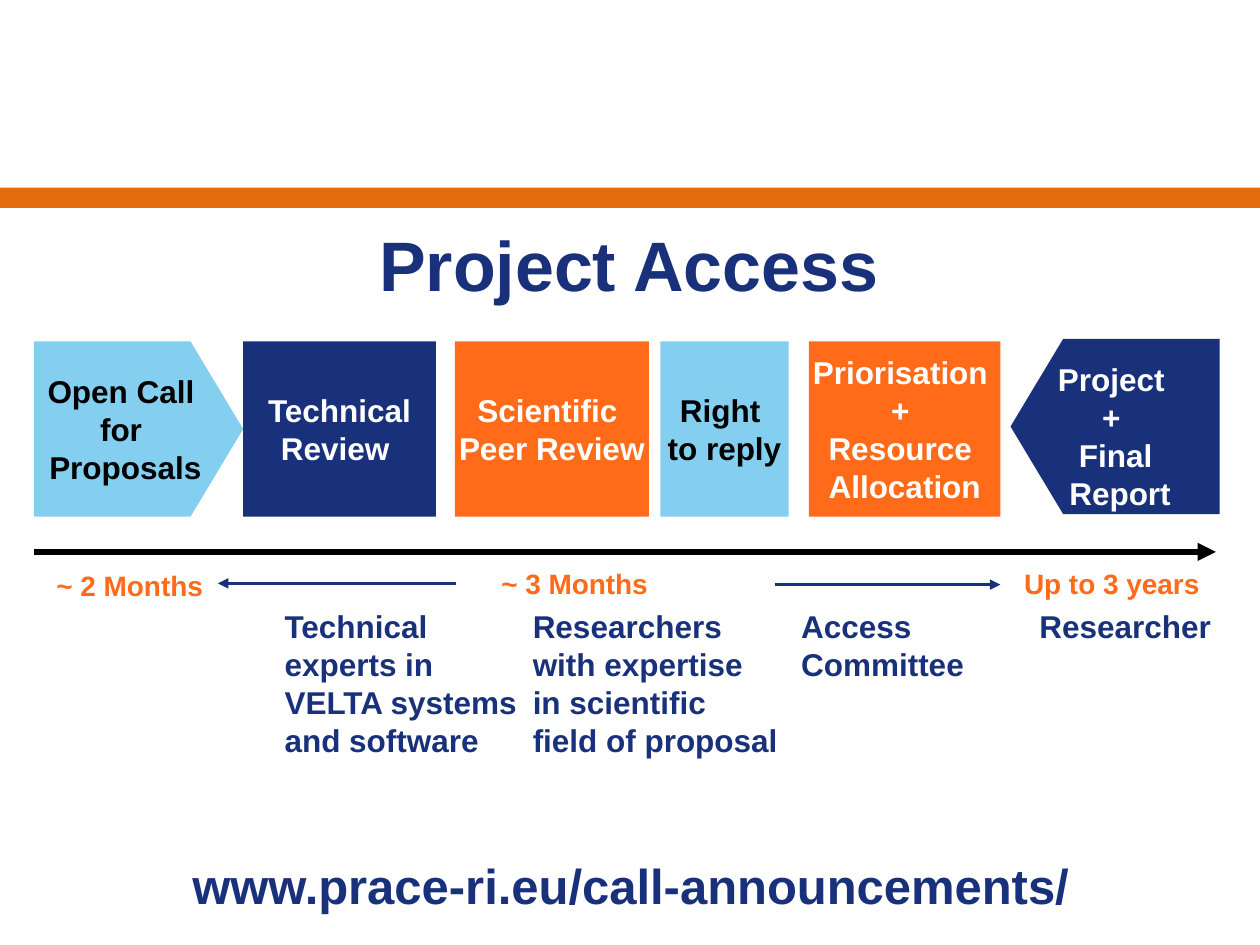
from lxml import etree
from pptx import Presentation
from pptx.dml.color import RGBColor
from pptx.enum.shapes import MSO_CONNECTOR, MSO_SHAPE
from pptx.enum.text import MSO_ANCHOR, MSO_AUTO_SIZE, PP_ALIGN
from pptx.oxml import parse_xml
from pptx.oxml.ns import nsdecls, qn
from pptx.util import Inches, Pt

NAVY, ORANGE, SKY = "19317B", "FF6B19", "84CEEF"
BLACK, WHITE, BAND = "000000", "FFFFFF", "E46C0A"
STAGE_TOP, STAGE_HEIGHT = 2.71, 1.39
ROLE_TOP = 4.77


def color(hex_code):
    return RGBColor.from_string(hex_code)


def write(text_frame, text, size, hex_code, align):
    """Fill a text frame; each line of text becomes a paragraph."""
    text_frame.text = text
    for paragraph in text_frame.paragraphs:
        paragraph.alignment = align
        paragraph.font.name = "Arial"
        paragraph.font.size = Pt(size)
        paragraph.font.bold = True
        paragraph.font.color.rgb = color(hex_code)


def add_block(slide, kind, left, top, width, height, fill):
    shape = slide.shapes.add_shape(
        kind, Inches(left), Inches(top), Inches(width), Inches(height))
    shape.shadow.inherit = False
    shape.fill.solid()
    shape.fill.fore_color.rgb = color(fill)
    shape.line.fill.background()
    return shape


def add_stage(slide, kind, left, width, fill, text, text_color):
    shape = add_block(slide, kind, left, STAGE_TOP, width, STAGE_HEIGHT, fill)
    shape.text_frame.word_wrap = False
    shape.text_frame.vertical_anchor = MSO_ANCHOR.MIDDLE
    write(shape.text_frame, text, 18, text_color, PP_ALIGN.CENTER)
    return shape


def add_text(slide, left, top, width, height, text, size, hex_code,
             align=PP_ALIGN.LEFT):
    box = slide.shapes.add_textbox(
        Inches(left), Inches(top), Inches(width), Inches(height))
    box.text_frame.word_wrap = True
    box.text_frame.auto_size = MSO_AUTO_SIZE.SHAPE_TO_FIT_TEXT
    write(box.text_frame, text, size, hex_code, align)


def add_arrow(slide, start, end, y, hex_code, weight):
    arrow = slide.shapes.add_connector(
        MSO_CONNECTOR.STRAIGHT, Inches(start), Inches(y), Inches(end), Inches(y))
    arrow.line.color.rgb = color(hex_code)
    arrow.line.width = Pt(weight)
    arrow.line._get_or_add_ln().append(
        parse_xml(f'<a:tailEnd {nsdecls("a")} type="triangle"/>'))
    etree.SubElement(arrow._element.spPr, qn("a:effectLst"))


def main():
    presentation = Presentation()
    presentation.slide_width = Inches(10)
    presentation.slide_height = Inches(7.5)
    slide = presentation.slides.add_slide(presentation.slide_layouts[5])

    # Header band and title
    add_block(slide, MSO_SHAPE.RECTANGLE, 0, 1.49, 10, 0.16, BAND)
    title = slide.shapes.title
    title.left, title.top = Inches(0.49), Inches(1.7)
    title.width, title.height = Inches(9), Inches(0.79)
    title.text_frame.vertical_anchor = MSO_ANCHOR.MIDDLE
    write(title.text_frame, "Project Access", 40, NAVY, PP_ALIGN.CENTER)

    # Process stages
    call = add_stage(slide, MSO_SHAPE.PENTAGON, 0.27, 1.66, SKY,
                     "Open Call \nfor \nProposals", BLACK)
    call.adjustments[0] = 0.3
    for left, width, fill, text, text_color in (
        (1.93, 1.53, NAVY, "Technical\nReview ", WHITE),
        (3.61, 1.54, ORANGE, "Scientific \nPeer Review", WHITE),
        (5.24, 1.02, SKY, "Right \vto reply", BLACK),
        (6.42, 1.52, ORANGE, "Priorisation \n+ \nResource \nAllocation", WHITE),
    ):
        add_stage(slide, MSO_SHAPE.RECTANGLE, left, width, fill, text, text_color)

    # Final stage points back, so its label is a separate upright box
    report = add_block(slide, MSO_SHAPE.PENTAGON, 8.02, 2.69, 1.66,
                       STAGE_HEIGHT, NAVY)
    report.adjustments[0] = 0.3
    report.rotation = 180
    add_text(slide, 7.71, 2.81, 2.29, 1.3, "Project \n+ \nFinal\n Report",
             18, WHITE, PP_ALIGN.CENTER)

    # Timeline and durations
    add_arrow(slide, 0.27, 9.65, 4.38, BLACK, 3.5)
    add_arrow(slide, 3.62, 1.73, 4.63, NAVY, 1.75)
    add_arrow(slide, 6.15, 7.94, 4.64, NAVY, 1.75)
    for left, top, width, text in (
        (0.35, 4.46, 1.5, "~ 2 Months"),
        (3.88, 4.45, 1.89, "~ 3 Months"),
        (8.03, 4.45, 1.77, "Up to 3 years"),
    ):
        add_text(slide, left, top, width, 0.37, text, 16, ORANGE)

    # People responsible
    for left, width, height, text in (
        (2.16, 2.05, 1.62, "Technical experts in VELTA systems and software"),
        (4.13, 2.15, 1.62,
         "Researchers with expertise in scientific\nfield of proposal"),
        (6.26, 2.05, 0.7, "Access Committee"),
        (8.15, 1.85, 0.4, "Researcher"),
    ):
        add_text(slide, left, ROLE_TOP, width, height, text, 18, NAVY)

    # Web address
    add_text(slide, 0.91, 6.74, 8.19, 0.57,
             "www.prace-ri.eu/call-announcements/", 28, NAVY, PP_ALIGN.CENTER)

    presentation.save("out.pptx")


if __name__ == "__main__":
    main()
